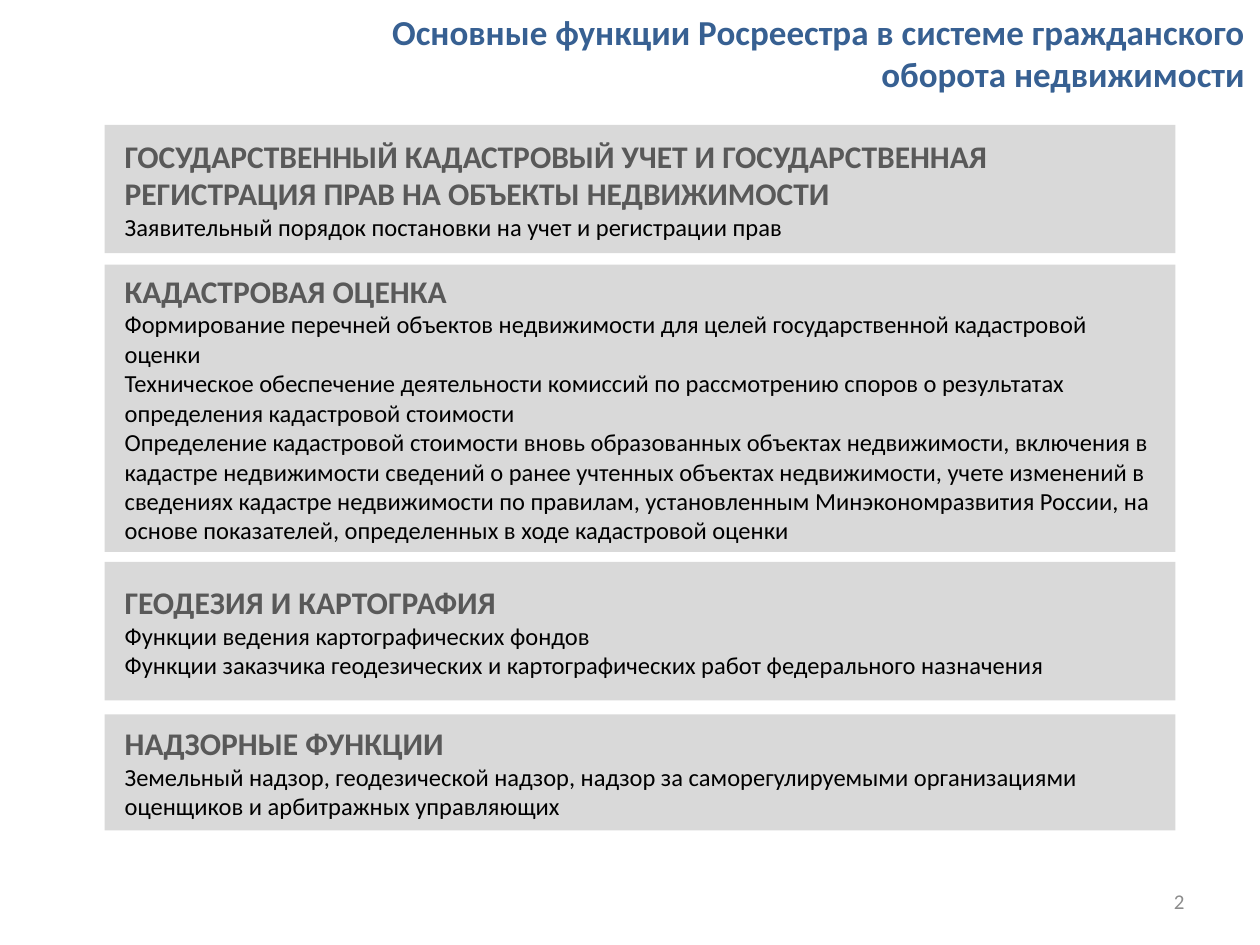
from dataclasses import dataclass

from pptx import Presentation
from pptx.dml.color import RGBColor as Rgb
from pptx.enum.shapes import MSO_SHAPE as Shape
from pptx.enum.text import MSO_ANCHOR as Anchor, MSO_AUTO_SIZE as Fit, PP_ALIGN as Align
from pptx.util import Inches, Pt

WIDE, HIGH = 10, 7.5
LEFT, SPAN = 0.83, 8.5  # the single column of panels


@dataclass(frozen=True)
class Theme:
    face: str = "Calibri"
    panel: str = "D9D9D9"
    title: tuple = (20, "376092", True)
    head: tuple = (18, "595959", True)
    body: tuple = (14, "000000", False)
    page: tuple = (12, "8C8C8C", False)


THEME = Theme()

# Each panel: top, height, heading, lines
PANELS = [
    (0.99, 1.02,
     "ГОСУДАРСТВЕННЫЙ КАДАСТРОВЫЙ УЧЕТ И ГОСУДАРСТВЕННАЯ РЕГИСТРАЦИЯ ПРАВ НА ОБЪЕКТЫ НЕДВИЖИМОСТИ",
     ["Заявительный порядок постановки на учет и регистрации прав"]),
    (2.1, 2.28, "КАДАСТРОВАЯ ОЦЕНКА",
     ["Формирование перечней объектов недвижимости для целей государственной кадастровой оценки",
      "Техническое обеспечение деятельности комиссий по рассмотрению споров о результатах "
      "определения кадастровой стоимости",
      "Определение кадастровой стоимости вновь образованных объектах недвижимости, включения в "
      "кадастре недвижимости сведений о ранее учтенных объектах недвижимости, учете изменений в "
      "сведениях кадастре недвижимости по правилам, установленным Минэкономразвития России, на "
      "основе показателей, определенных в ходе кадастровой оценки"]),
    (4.46, 1.1, "ГЕОДЕЗИЯ И КАРТОГРАФИЯ",
     ["Функции ведения картографических фондов",
      "Функции заказчика геодезических и картографических работ федерального назначения"]),
    (5.67, 0.92, "НАДЗОРНЫЕ ФУНКЦИИ",
     ["Земельный надзор, геодезической надзор, надзор за саморегулируемыми организациями "
      "оценщиков и арбитражных управляющих"]),
]


def apply(item, form):
    for name, value in form.items():
        setattr(item, name, value)


def place(*box):
    return [Inches(part) for part in box]


def write(shape, rows, align, inset=0.1):
    """Fill a shape with (text, style) rows, one paragraph each."""
    frame = shape.text_frame
    side, edge = Inches(inset), Inches(0.05)
    apply(frame, dict(word_wrap=True, auto_size=Fit.NONE, vertical_anchor=Anchor.MIDDLE,
                      margin_left=side, margin_right=side, margin_top=edge, margin_bottom=edge))
    for i, (text, (size, color, bold)) in enumerate(rows):
        para = frame.add_paragraph() if i else frame.paragraphs[0]
        apply(para, dict(alignment=align, space_before=Pt(0), space_after=Pt(0)))
        run = para.add_run()
        run.text = text
        apply(run.font, dict(name=THEME.face, size=Pt(size), bold=bold))
        run.font.color.rgb = Rgb.from_string(color)


def add_title(slide, text):
    title = slide.shapes.title
    apply(title, dict(zip(("left", "top", "width", "height"), place(2.09, 0, 7.89, 0.84))))
    write(title, [(text, THEME.title)], Align.RIGHT)


def add_panel(slide, top, height, head, lines):
    panel = slide.shapes.add_shape(Shape.RECTANGLE, *place(LEFT, top, SPAN, height))
    panel.shadow.inherit = False
    panel.fill.solid()
    panel.fill.fore_color.rgb = Rgb.from_string(THEME.panel)
    panel.line.fill.background()
    rows = [(head, THEME.head)] + [(line, THEME.body) for line in lines]
    write(panel, rows, Align.LEFT, inset=0.16)


def add_page(slide, text):
    box = slide.shapes.add_textbox(*place(7.17, 6.95, 2.33, 0.4))
    write(box, [(text, THEME.page)], Align.RIGHT)


def main():
    deck = Presentation()
    apply(deck, dict(slide_width=Inches(WIDE), slide_height=Inches(HIGH)))
    slide = deck.slides.add_slide(deck.slide_layouts.get_by_name("Title Only"))

    add_title(slide, "Основные функции Росреестра в системе гражданского оборота недвижимости")
    for panel in PANELS:
        add_panel(slide, *panel)
    add_page(slide, "2")

    deck.save("out.pptx")


if __name__ == "__main__":
    main()
